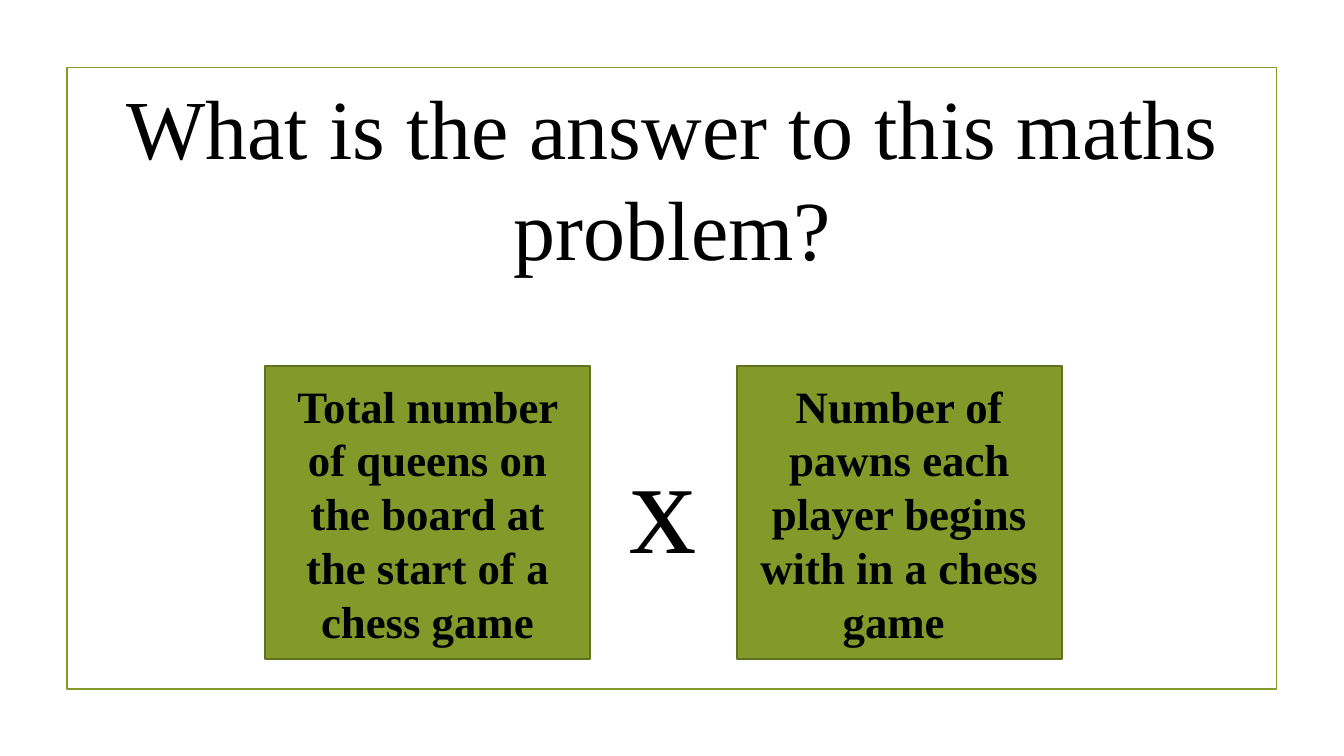
from pptx import Presentation
from pptx.dml.color import RGBColor
from pptx.enum.shapes import MSO_SHAPE as Shape
from pptx.enum.text import MSO_ANCHOR as Anchor, PP_ALIGN as Align
from pptx.util import Pt

FONT = "Times New Roman"
BLACK, GREEN, DARK_GREEN = "000000", "83992A", "61711F"


def color(hex_string):
    return RGBColor.from_string(hex_string)


def write(shape, text, size, bold=False, anchor=Anchor.TOP):
    frame = shape.text_frame
    frame.word_wrap = True
    frame.vertical_anchor = anchor
    paragraph = frame.paragraphs[0]
    paragraph.alignment = Align.CENTER
    run = paragraph.add_run()
    run.text = text
    run.font.name = FONT
    run.font.size = Pt(size)
    run.font.bold = bold
    run.font.color.rgb = color(BLACK)


def add_rectangle(slide, left, top, width, height, line, fill=None):
    shape = slide.shapes.add_shape(
        Shape.RECTANGLE, Pt(left), Pt(top), Pt(width), Pt(height))
    shape.shadow.inherit = False
    if fill:
        shape.fill.solid()
        shape.fill.fore_color.rgb = color(fill)
    else:
        shape.fill.background()
    shape.line.color.rgb = color(line)
    shape.line.width = Pt(1.25)
    return shape


def add_text(slide, text, left, top, width, height, **style):
    box = slide.shapes.add_textbox(Pt(left), Pt(top), Pt(width), Pt(height))
    write(box, text, **style)


def add_product(slide, factors, left, top, width, height, gap):
    """Place the factor boxes in a row with a times sign in each gap."""
    box_width = (width - gap * (len(factors) - 1)) / len(factors)
    for index, factor in enumerate(factors):
        box_left = left + index * (box_width + gap)
        box = add_rectangle(slide, box_left, top, box_width, height,
                            line=DARK_GREEN, fill=GREEN)
        write(box, factor, size=32, bold=True, anchor=Anchor.MIDDLE)
        if index:
            add_text(slide, "x", box_left - gap, top + 34.5, gap, 124, size=96)


def add_question_slide(presentation, question, factors):
    slide = presentation.slides.add_slide(presentation.slide_layouts[6])
    left, top, width, height = 47.8, 48.2, 864, 444
    add_rectangle(slide, left, top, width, height, line=GREEN)
    add_text(slide, question, left, top + 2.2, width + 1, 152.6, size=60)
    add_product(slide, factors, left + 141.6, top + 213.2, 569, 209.5, gap=105)


def main():
    presentation = Presentation()
    presentation.slide_width, presentation.slide_height = Pt(960), Pt(540)
    add_question_slide(
        presentation,
        "What is the answer to this maths problem?",
        ["Total number of queens on the board at the start of a chess game",
         "Number of pawns each player begins with in a chess game "])
    presentation.save("out.pptx")


if __name__ == "__main__":
    main()
